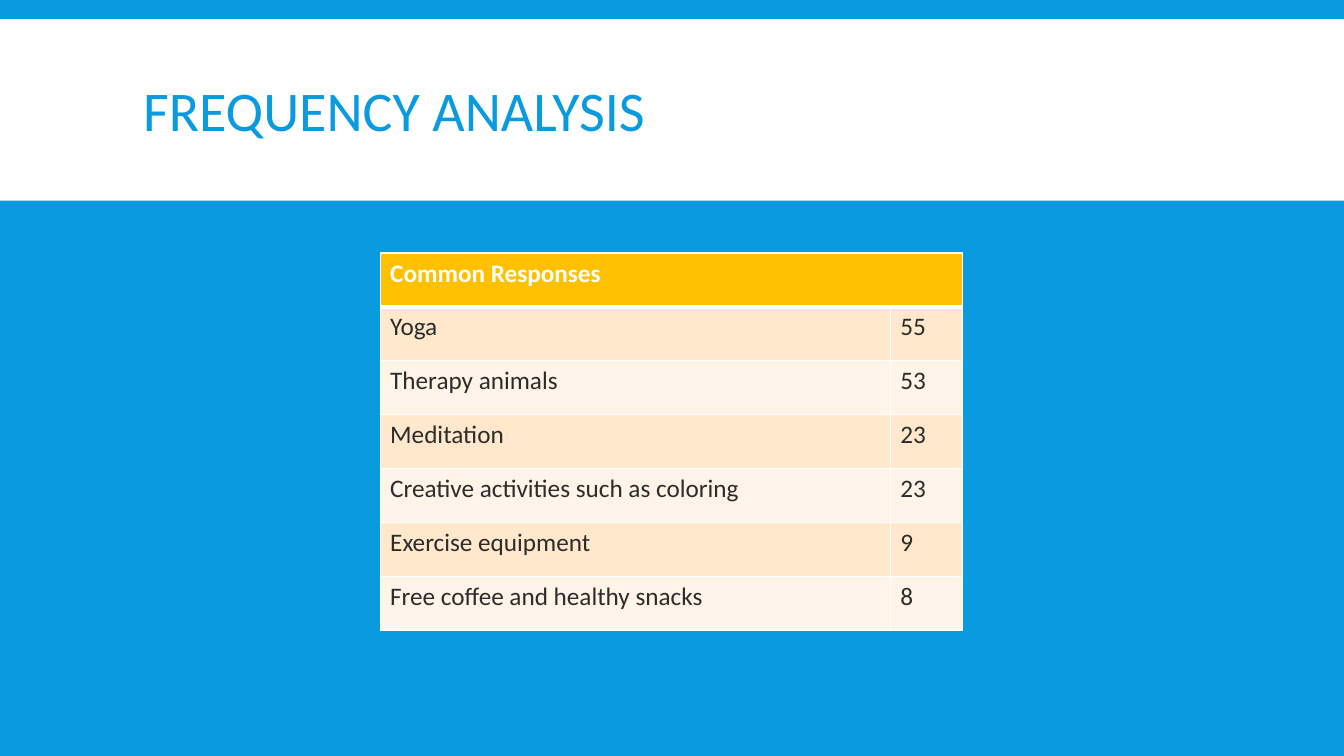
from lxml import etree
from pptx import Presentation
from pptx.dml.color import RGBColor
from pptx.enum.shapes import MSO_SHAPE
from pptx.enum.text import MSO_ANCHOR, PP_ALIGN
from pptx.oxml.ns import qn
from pptx.util import Inches, Pt

RECTANGLE = MSO_SHAPE.RECTANGLE
MIDDLE = MSO_ANCHOR.MIDDLE
LEFT = PP_ALIGN.LEFT

BLUE, WHITE, GOLD, DARK = "099BDD", "FFFFFF", "FFC000", "2C2C2C"
ROW_FILLS = ("FFE8CC", "FFF4E7")
TITLE_ONLY = 5

HEADING = "Common Responses"
RESPONSES = [
    ("Yoga", 55),
    ("Therapy animals", 53),
    ("Meditation", 23),
    ("Creative activities such as coloring", 23),
    ("Exercise equipment", 9),
    ("Free coffee and healthy snacks", 8),
]


def color(hex_text):
    return RGBColor.from_string(hex_text)


def paint(fill, hex_text):
    fill.solid()
    fill.fore_color.rgb = color(hex_text)


def format_font(font, hex_text, **values):
    for name, value in {"name": "Calibri", **values}.items():
        setattr(font, name, value)
    font.color.rgb = color(hex_text)


def set_borders(cell, widths):
    """Draw white cell edges; widths are points for left, right, top, bottom."""
    properties = cell._tc.get_or_add_tcPr()
    for index, (side, width) in enumerate(zip("LRTB", widths)):
        line = etree.Element(qn(f"a:ln{side}"), w=str(Pt(width)))
        solid = etree.SubElement(line, qn("a:solidFill"))
        etree.SubElement(solid, qn("a:srgbClr"), val=WHITE)
        properties.insert(index, line)


def add_title_band(page, left, top, width, height):
    # White band behind the title
    band = page.shapes.add_shape(
        RECTANGLE, Inches(left), Inches(top), Inches(width), Inches(height))
    band.shadow.inherit = False
    paint(band.fill, WHITE)
    band.line.fill.background()

    # Title placeholder
    title = page.shapes.title
    title.element.addprevious(band.element)
    box = {"left": left + 1.32, "top": top + 0.12,
           "width": width - 2.63, "height": height - 0.15}
    for name, value in box.items():
        setattr(title, name, Inches(value))
    frame = title.text_frame
    frame.text = "FREQUENCY ANALYSIS"
    frame.vertical_anchor = MIDDLE
    para = frame.paragraphs[0]
    para.alignment = LEFT
    para.line_spacing = 0.85
    format_font(para.runs[0].font, BLUE, size=Pt(40))


def add_response_table(page, left, top, width, height):
    rows = [(HEADING, "")] + RESPONSES
    table = page.shapes.add_table(
        len(rows), 2, Inches(left), Inches(top), Inches(width), Inches(height)).table
    count_width = 0.72
    table.columns[0].width = Inches(width - count_width)
    table.columns[1].width = Inches(count_width)

    for row_index, values in enumerate(rows):
        table.rows[row_index].height = Inches(height / len(rows))
        is_header = row_index == 0
        fill = GOLD if is_header else ROW_FILLS[(row_index - 1) % 2]
        top_width = 3 if row_index == 1 else 1
        bottom_width = 3 if is_header else 1
        for column_index, value in enumerate(values):
            cell = table.cell(row_index, column_index)
            paint(cell.fill, fill)
            set_borders(cell, (1, 1, top_width, bottom_width))
            cell.text = str(value)
            format_font(cell.text_frame.paragraphs[0].font,
                        WHITE if is_header else DARK,
                        size=Pt(18), bold=is_header)

    # Heading spans both columns
    table.cell(0, 0).merge(table.cell(0, 1))


def main():
    deck = Presentation()
    deck.slide_width, deck.slide_height = Inches(13.33), Inches(7.5)
    page = deck.slides.add_slide(deck.slide_layouts[TITLE_ONLY])
    paint(page.background.fill, BLUE)
    add_title_band(page, 0, 0.19, 13.33, 1.8)
    add_response_table(page, 3.77, 2.51, 5.78, 3.74)
    deck.save("out.pptx")


if __name__ == "__main__":
    main()
